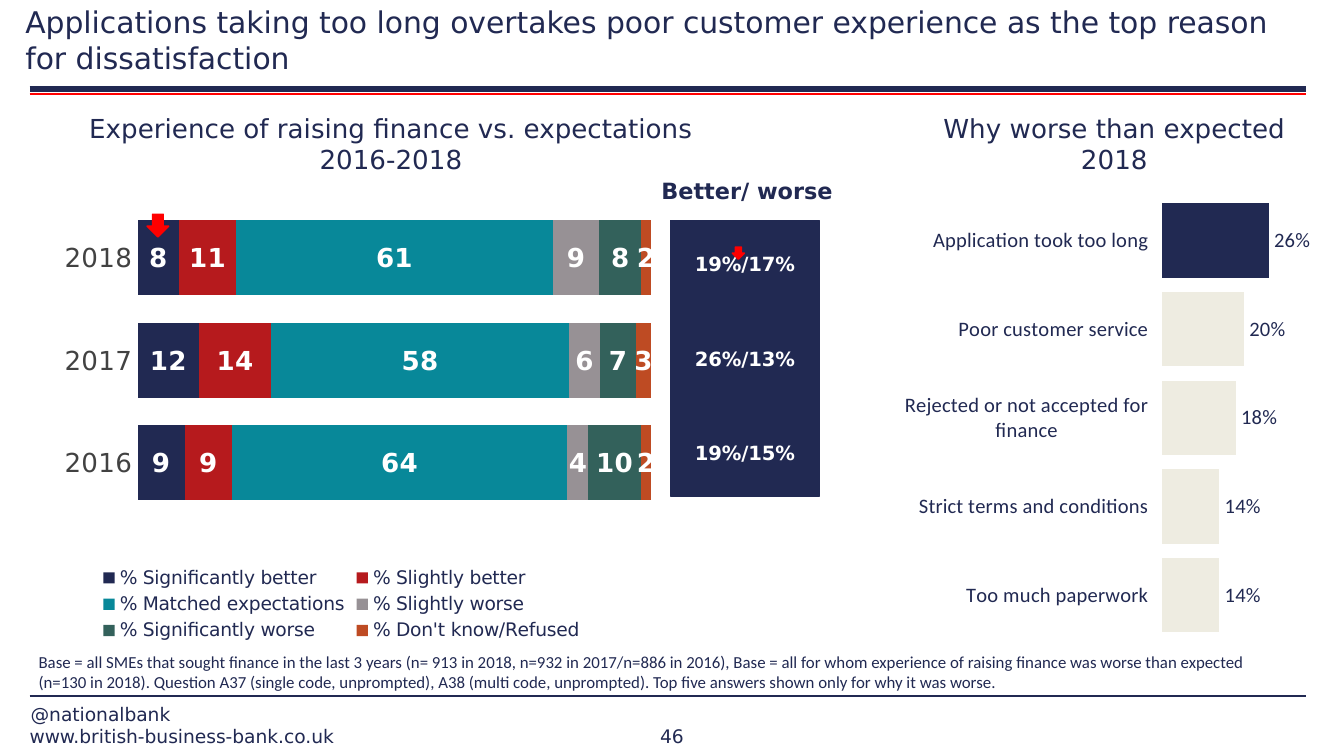
from lxml import etree
from pptx import Presentation
from pptx.chart.data import CategoryChartData
from pptx.dml.color import RGBColor
from pptx.enum.chart import XL_CHART_TYPE, XL_LABEL_POSITION, XL_LEGEND_POSITION, XL_TICK_MARK
from pptx.enum.shapes import MSO_CONNECTOR, MSO_SHAPE
from pptx.enum.text import MSO_ANCHOR, PP_ALIGN
from pptx.oxml.ns import qn
from pptx.util import Cm, Pt

STRAIGHT = MSO_CONNECTOR.STRAIGHT
RECTANGLE, DOWN_ARROW = MSO_SHAPE.RECTANGLE, MSO_SHAPE.DOWN_ARROW
TOP, MIDDLE, BOTTOM = MSO_ANCHOR.TOP, MSO_ANCHOR.MIDDLE, MSO_ANCHOR.BOTTOM
LEFT, CENTER = PP_ALIGN.LEFT, PP_ALIGN.CENTER
STACKED, CLUSTERED = XL_CHART_TYPE.BAR_STACKED_100, XL_CHART_TYPE.BAR_CLUSTERED
OUTSIDE_END = XL_LABEL_POSITION.OUTSIDE_END
LEGEND_BOTTOM = XL_LEGEND_POSITION.BOTTOM
NO_TICK = XL_TICK_MARK.NONE
NAVY, RED, WHITE, CREAM, GREY = "212952", "FF0000", "FFFFFF", "EEECE1", "424242"
SANS, CALIBRI = "DejaVu Sans", "Calibri"


def set_font(font, size, color=NAVY, name=SANS, bold=False):
    font.size = Pt(size)
    font.name = name
    font.bold = bold
    font.color.rgb = RGBColor.from_string(color)


def add_bar_chart(kind, box, plot, categories, series_values, gap, maximum, size):
    data = CategoryChartData()
    data.categories = categories
    for name, values in series_values:
        data.add_series(name, values)
    chart = slide.shapes.add_chart(kind, *[Cm(length) for length in box], data).chart
    chart.has_title = False
    chart.has_legend = False
    set_font(chart.font, size, NAVY, CALIBRI)
    chart.plots[0].gap_width = gap
    chart.plots[0].vary_by_categories = False
    chart.category_axis.reverse_order = True
    chart.category_axis.format.line.fill.background()
    chart.value_axis.visible = False
    chart.value_axis.has_major_gridlines = False
    chart.value_axis.minimum_scale = 0
    chart.value_axis.maximum_scale = maximum
    plot_area = chart._chartSpace.chart.plotArea
    for layout in plot_area.findall(qn("c:layout")):
        plot_area.remove(layout)
    layout = etree.Element(qn("c:layout"))
    manual = etree.SubElement(layout, qn("c:manualLayout"))
    settings = [("layoutTarget", "inner"), ("xMode", "edge"), ("yMode", "edge")]
    for tag, value in settings + list(zip("xywh", plot)):
        etree.SubElement(manual, qn("c:" + tag)).set("val", str(value))
    plot_area.insert(0, layout)
    return chart


presentation = Presentation()
presentation.slide_width = Cm(25.4)
presentation.slide_height = Cm(14.29)
slide = presentation.slides.add_slide(presentation.slide_layouts[6])

for top, color, width in [(1.68, NAVY, 3), (1.78, RED, 1), (13.16, NAVY, 1)]:
    line = slide.shapes.add_connector(STRAIGHT, Cm(0.56), Cm(top), Cm(24.69), Cm(top))
    line.line.color.rgb = RGBColor.from_string(color)
    line.line.width = Pt(width)
    etree.SubElement(line._element.spPr, qn("a:effectLst"))

experience = add_bar_chart(
    STACKED, (0.2, 3.71, 12.5, 8.51), (0.192, 0.023, 0.777, 0.683),
    ["2018", "2017", "2016"],
    [
        ("% Significantly better", (8, 12, 9)),
        ("% Slightly better", (11, 14, 9)),
        ("% Matched expectations", (61, 58, 64)),
        ("% Slightly worse", (9, 6, 4)),
        ("% Significantly worse", (8, 7, 10)),
        ("% Don't know/Refused", (2, 3, 2)),
    ],
    37, 1, 18)
experience.plots[0].overlap = 100
experience.value_axis.major_unit = 0.1
experience.category_axis.major_tick_mark = NO_TICK
set_font(experience.category_axis.tick_labels.font, 14, GREY)
experience.has_legend = True
experience.legend.position = LEGEND_BOTTOM
experience.legend.include_in_layout = False
set_font(experience.legend.font, 10)
series_colors = [NAVY, "B61A1D", "088899", "979195", "33615B", "BE4B23"]
for series, color in zip(experience.plots[0].series, series_colors):
    series.format.fill.solid()
    series.format.fill.fore_color.rgb = RGBColor.from_string(color)
    series.data_labels.show_value = True
    set_font(series.data_labels.font, 14, WHITE, bold=True)

reasons = add_bar_chart(
    CLUSTERED, (16.76, 3.71, 9.3, 8.38), (0.559, 0, 0.418, 1),
    ["Application took too long", "Poor customer service",
     "Rejected or not accepted for finance", "Strict terms and conditions",
     "Too much paperwork"],
    [("Reasons", (26, 20, 18, 14, 14))],
    19, 50, 11)
reason_series = reasons.plots[0].series[0]
for fill, color in [(reason_series.format.fill, CREAM),
                    (reason_series.points[0].format.fill, NAVY)]:
    fill.solid()
    fill.fore_color.rgb = RGBColor.from_string(color)
reason_labels = reason_series.data_labels
reason_labels.show_value = True
reason_labels.number_format = '0"%"'
reason_labels.number_format_is_linked = False
reason_labels.position = OUTSIDE_END
set_font(reason_labels.font, 11, NAVY, CALIBRI)

for preset, color, box in [
    (RECTANGLE, NAVY, (12.67, 4.17, 2.82, 5.21)),
    (DOWN_ARROW, RED, (2.78, 4.05, 0.41, 0.43)),
    (DOWN_ARROW, RED, (13.84, 4.67, 0.23, 0.23)),
]:
    shape = slide.shapes.add_shape(preset, *[Cm(length) for length in box])
    shape.shadow.inherit = False
    shape.fill.solid()
    shape.fill.fore_color.rgb = RGBColor.from_string(color)
    shape.line.color.rgb = RGBColor.from_string(color)
    shape.line.width = Pt(0.75)
    if preset == RECTANGLE:
        shape.text_frame.text = "19%/17%\n26%/13%\n19%/15%"
        shape.text_frame.vertical_anchor = MIDDLE
        for index, paragraph in enumerate(shape.text_frame.paragraphs):
            paragraph.alignment = CENTER
            paragraph.space_before = Pt(38 if index else 0)
            set_font(paragraph.runs[0].font, 10.5, WHITE, bold=True)

base_note = (
    "Base = all SMEs that sought finance in the last 3 years (n= 913 in 2018, n=932 in "
    "2017/n=886 in 2016), Base = all for whom experience of raising finance was worse than "
    "expected (n=130 in 2018). Question A37 (single code, unprompted), A38 (multi code, "
    "unprompted). Top five answers shown only for why it was worse.")
title = ("Applications taking too long overtakes poor customer experience as the top "
         "reason for dissatisfaction")
for text, box, size, name, bold, alignment, anchor in [
    (title, (0.48, -0.48, 24.2, 1.9), 16, SANS, False, LEFT, BOTTOM),
    ("Experience of raising finance vs. expectations 2016-2018",
     (0.66, 2, 13.46, 1.45), 14, SANS, False, CENTER, TOP),
    ("Why worse than expected 2018", (17.02, 2, 8.08, 1.45), 14, SANS, False, CENTER, TOP),
    ("Better/ worse", (10.08, 3.23, 8.08, 0.76), 12, SANS, True, CENTER, TOP),
    (base_note, (0.48, 12.19, 24.13, 1.02), 9, CALIBRI, False, LEFT, TOP),
    ("@nationalbank", (0.58, 13.28, 8.08, 0.43), 10, SANS, False, LEFT, BOTTOM),
    ("www.british-business-bank.co.uk", (0.56, 13.69, 8.1, 0.43), 10, SANS, False, LEFT, BOTTOM),
    ("46", (11.2, 13.69, 3, 0.43), 10, SANS, False, CENTER, BOTTOM),
]:
    text_frame = slide.shapes.add_textbox(*[Cm(length) for length in box]).text_frame
    text_frame.word_wrap = True
    text_frame.vertical_anchor = anchor
    if anchor == BOTTOM:
        text_frame.margin_left = text_frame.margin_right = Cm(0)
        text_frame.margin_top = text_frame.margin_bottom = Cm(0)
    text_frame.text = text
    paragraph = text_frame.paragraphs[0]
    paragraph.alignment = alignment
    set_font(paragraph.runs[0].font, size, NAVY, name, bold)

presentation.save("out.pptx")
